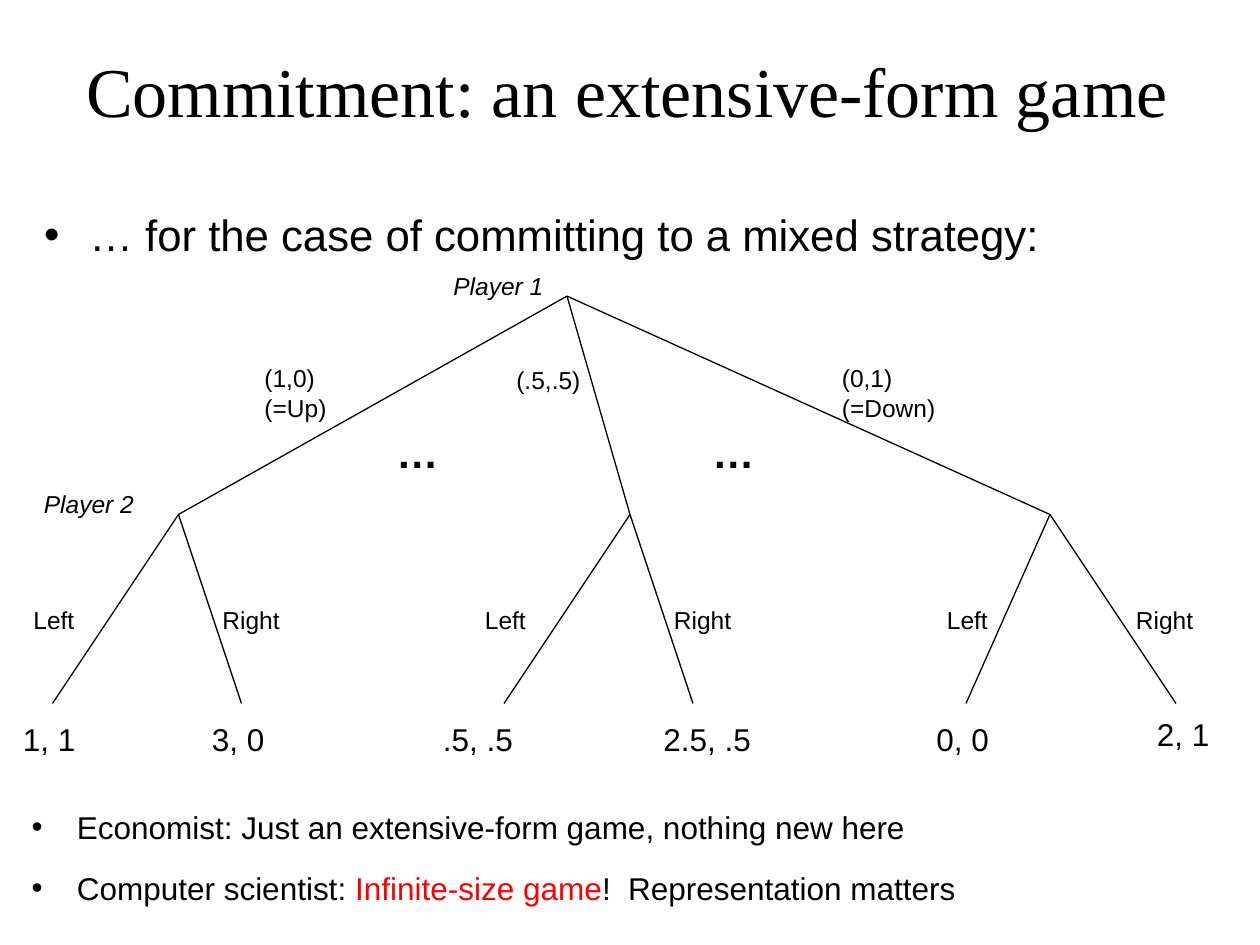
"""Build a slide with a game tree for committing to a mixed strategy."""
from lxml import etree
from pptx import Presentation
from pptx import util as u
from pptx.dml.color import RGBColor
from pptx.enum import shapes, text
from pptx.oxml.ns import qn

COLS, ROWS = 120, 90
WIDE, HIGH = u.Inches(10), u.Inches(7.5)
BLACK, RED = "000000", "FF0000"
SANS, SERIF = "Arial", "Times New Roman"

TITLE = "Commitment: an extensive-form game"
LISTS = [
    ((3, 18, 110, 11), 25,
     [[("… for the case of committing to a mixed strategy:", BLACK)]]),
    ((1.8, 75.5, 118.2, 11), 18,
     [[("Economist: Just an extensive-form game, nothing new here", BLACK)],
      [("Computer scientist: ", BLACK), ("Infinite-size game", RED),
       ("!  Representation matters", BLACK)]]),
]
ROOT = (54, 28.2)
NODE_ROW, LEAF_ROW, MOVE_ROW = 49, 67, 57
# node column, then per leaf: move, leaf column, move column, payoff, its place
TREE = [
    (17, [("Left", 5, 2, "1, 1", (1, 68)),
          ("Right", 23, 20, "3, 0", (19, 68))]),
    (60, [("Left", 48, 45, ".5, .5", (41, 68)),
          ("Right", 66, 63, "2.5, .5", (62, 68))]),
    (100, [("Left", 92, 89, "0, 0", (88, 68)),
           ("Right", 112, 107, "2, 1", (109, 67.5))]),
]
PLAYERS = [("Player 1", (42, 25.2, 12, 4)), ("Player 2", (3, 46, 12, 4))]
MIXES = [("(1,0) (=Up)", (24, 34, 10, 6.8)),
         ("(.5,.5)", (48, 34.2, 12, 4)),
         ("(0,1) (=Down)", (79, 34, 12, 6.8))]
GAPS = [(36.5, 40, 6.5, 6), (66.6, 40, 6.5, 6)]


def spot(x, y):
    return int(WIDE * x / COLS), int(HIGH * y / ROWS)


def place(shape, box):
    shape.left, shape.top = spot(*box[:2])
    shape.width, shape.height = spot(*box[2:])


def write(para, words, size, face=SANS, color=BLACK, bold=False, slant=False):
    run = para.add_run()
    run.text = words
    font = run.font
    font.name, font.size = face, u.Pt(size)
    font.bold, font.italic = bold, slant
    font.color.rgb = RGBColor.from_string(color)


def label(words, box, size=14, wrap=True, **style):
    frame = slide.shapes.add_textbox(*spot(*box[:2]), *spot(*box[2:])).text_frame
    frame.word_wrap = wrap
    para = frame.paragraphs[0]
    para.alignment = text.PP_ALIGN.LEFT if wrap else text.PP_ALIGN.CENTER
    write(para, words, size, **style)


def edge(start, end):
    line = slide.shapes.add_connector(
        shapes.MSO_CONNECTOR.STRAIGHT, *spot(*start), *spot(*end))
    line.line.color.rgb = RGBColor.from_string(BLACK)
    line.line.width = u.Pt(0.75)
    etree.SubElement(line._element.spPr, qn("a:effectLst"))


def bullet(para):
    para.line_spacing, para.space_before = 1.24, u.Pt(8.1)
    props = para._p.get_or_add_pPr()
    props.set("marL", str(u.Inches(0.36)))
    props.set("indent", str(-u.Inches(0.36)))
    etree.SubElement(props, qn("a:buFont"), typeface=SANS)
    etree.SubElement(props, qn("a:buChar"), char="•")


def fill(holder, box, anchor):
    place(holder, box)
    frame = holder.text_frame
    frame.word_wrap, frame.auto_size = True, text.MSO_AUTO_SIZE.NONE
    frame.vertical_anchor = anchor
    return frame


deck = Presentation()
deck.slide_width, deck.slide_height = WIDE, HIGH
slide = deck.slides.add_slide(deck.slide_layouts[3])
for holder in list(slide.placeholders)[3:]:
    holder._element.getparent().remove(holder._element)

head = fill(slide.shapes.title, (7, 3, 106, 11), text.MSO_ANCHOR.MIDDLE)
head.paragraphs[0].alignment = text.PP_ALIGN.LEFT
write(head.paragraphs[0], TITLE, 40, SERIF)

for key, (box, size, items) in enumerate(LISTS, 1):
    body = fill(slide.placeholders[key], box, text.MSO_ANCHOR.TOP)
    for num, runs in enumerate(items):
        para = body.add_paragraph() if num else body.paragraphs[0]
        bullet(para)
        for words, color in runs:
            write(para, words, size, color=color)

for col, leaves in TREE:
    node = (col, NODE_ROW)
    edge(ROOT, node)
    for move, leaf, side, pay, at in leaves:
        edge(node, (leaf, LEAF_ROW))
        label(move, (side, MOVE_ROW, 9, 4))
        label(pay, (*at, 12, 4.8), 18)

for name, box in PLAYERS:
    label(name, box, slant=True)
for mix, box in MIXES:
    label(mix, box)
for box in GAPS:
    label("…", box, 24, wrap=False, bold=True)

deck.save("out.pptx")
